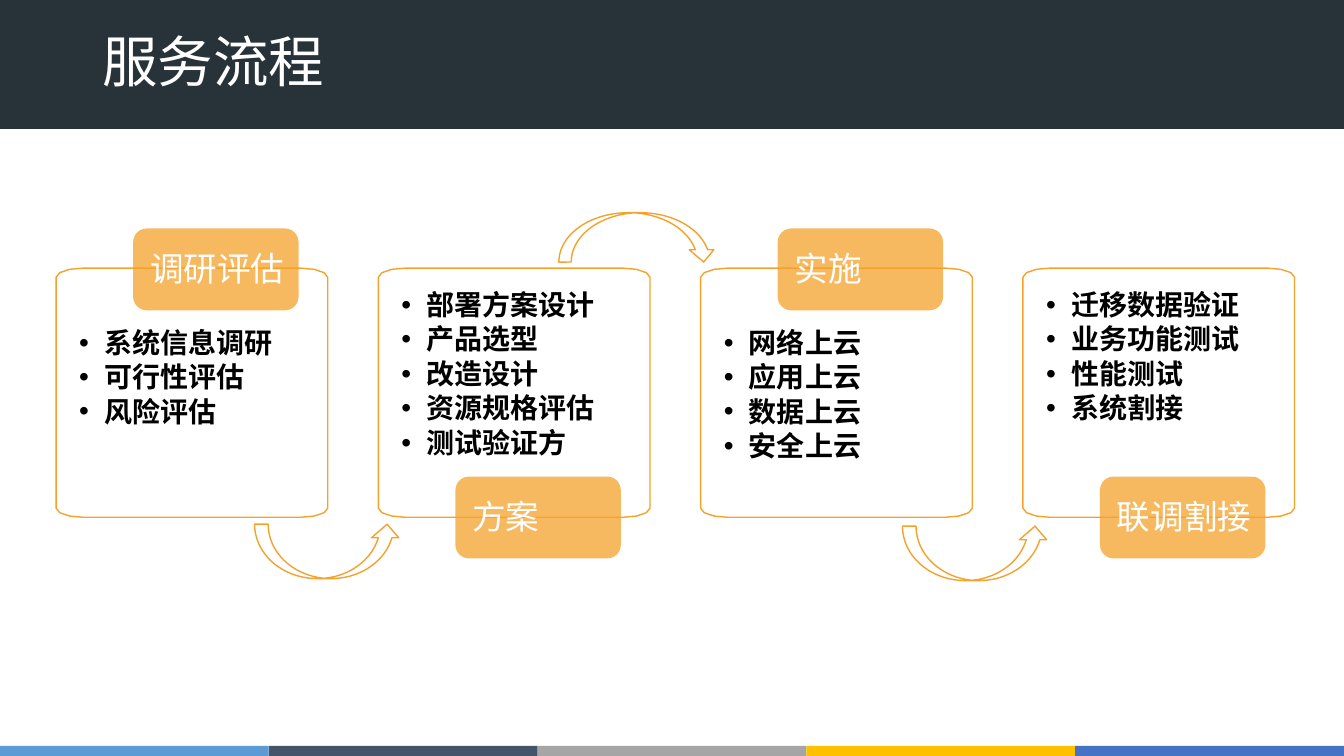
import math

from lxml import etree
from pptx import Presentation
from pptx.dml.color import RGBColor
from pptx.enum import shapes, text
from pptx.oxml import ns
from pptx.util import Pt

FONT = "Noto Sans CJK SC"
COLORS = {
    "band": "273339",
    "orange": "F5A22C",
    "white": "FFFFFF",
    "black": "000000",
}
FOOTER_COLORS = ["5B9BD5", "44546A", "A5A5A5", "FFC000", "4472C4"]

# Stage name, tasks, whether its label sits at the top of the panel
STAGES = [
    ("调研评估", ["系统信息调研", "可行性评估", "风险评估"], True),
    ("方案", ["部署方案设计", "产品选型", "改造设计", "资源规格评估", "测试验证方"], False),
    ("实施", ["网络上云", "应用上云", "数据上云", "安全上云"], True),
    ("联调割接", ["迁移数据验证", "业务功能测试", "性能测试", "系统割接"], False),
]
PANEL_LEFT, PANEL_TOP, PANEL_STEP = 40.1, 191.5, 230.2
PANEL_WIDTH, PANEL_HEIGHT = 194, 178
CORNER_X, CORNER_Y = 19.4, 6.5
CORNER_STEPS = 3

# Left, top, width, height, whether it curves below the panels
ARROWS = [
    (181.8, 374.4, 104.4, 38.9, True),
    (644.6, 375.8, 104.4, 38.9, True),
    (399.2, 151.9, 112.3, 35.3, False),
]


def rgb(hex_color):
    return RGBColor.from_string(hex_color)


def format_runs(paragraph, size, color, bold=False):
    for run in paragraph.runs:
        run.font.size = Pt(size)
        run.font.bold = bold
        run.font.color.rgb = rgb(color)
        run.font.name = FONT
        east_asian = etree.SubElement(run._r.get_or_add_rPr(), ns.qn("a:ea"))
        east_asian.set("typeface", FONT)


def add_block(slide, kind, box, fill, alpha=None):
    block = slide.shapes.add_shape(kind, *map(Pt, box))
    block.shadow.inherit = False
    block.line.fill.background()
    block.fill.solid()
    block.fill.fore_color.rgb = rgb(fill)
    if alpha is not None:
        color = block.element.spPr.find(".//" + ns.qn("a:srgbClr"))
        etree.SubElement(color, ns.qn("a:alpha")).set("val", str(alpha * 1000))
    return block


def set_outline(shape):
    shape.shadow.inherit = False
    shape.fill.background()
    shape.line.color.rgb = rgb(COLORS["orange"])
    shape.line.width = Pt(1)


def corner_points(left, top):
    """Clockwise outline with quarter-ellipse corners, starting at the left."""
    near_x, far_x = left + CORNER_X, left + PANEL_WIDTH - CORNER_X
    near_y, far_y = top + CORNER_Y, top + PANEL_HEIGHT - CORNER_Y
    centers = [(near_x, near_y), (far_x, near_y), (far_x, far_y), (near_x, far_y)]
    points = []
    for quarter, (x, y) in enumerate(centers):
        for step in range(CORNER_STEPS + 1):
            angle = math.pi + (quarter + step / CORNER_STEPS) * math.pi / 2
            points.append((Pt(x + CORNER_X * math.cos(angle)),
                           Pt(y + CORNER_Y * math.sin(angle))))
    return points


def add_bullet(paragraph):
    properties = paragraph._p.get_or_add_pPr()
    properties.set("marL", str(Pt(18)))
    properties.set("indent", str(-Pt(18)))
    etree.SubElement(properties, ns.qn("a:buFont")).set("typeface", "Arial")
    etree.SubElement(properties, ns.qn("a:buChar")).set("char", "•")


def add_panel(slide, left, tasks, label_on_top):
    start, *rest = corner_points(left, PANEL_TOP)
    builder = slide.shapes.build_freeform(*start)
    builder.add_line_segments(rest, close=True)
    panel = builder.convert_to_shape()
    set_outline(panel)
    frame = panel.text_frame
    frame.word_wrap = True
    frame.vertical_anchor = text.MSO_ANCHOR.TOP
    frame.margin_left = frame.margin_right = frame.margin_bottom = Pt(16.5)
    frame.margin_top = Pt(43.5 if label_on_top else 16.5)
    frame.text = "\n".join(tasks)
    for paragraph in frame.paragraphs:
        paragraph.alignment = text.PP_ALIGN.LEFT
        paragraph.line_spacing = 0.9
        paragraph.space_after = Pt(3)
        add_bullet(paragraph)
        format_runs(paragraph, 20, COLORS["black"], bold=True)


def add_label(slide, left, top, name):
    add_block(slide, shapes.MSO_SHAPE.ROUNDED_RECTANGLE, (left, top, 118.2, 58.5),
              COLORS["orange"], alpha=75)
    caption = slide.shapes.add_textbox(Pt(left + 5), Pt(top + 10), Pt(126), Pt(36))
    caption.text_frame.word_wrap = True
    caption.text_frame.text = name
    format_runs(caption.text_frame.paragraphs[0], 24, COLORS["white"])


def add_arrow(slide, left, top, width, height, below):
    arrow = slide.shapes.add_shape(shapes.MSO_SHAPE.CURVED_DOWN_ARROW,
                                   Pt(left), Pt(top), Pt(width), Pt(height))
    set_outline(arrow)
    if below:
        arrow.rotation = 180
        arrow.element.spPr.find(ns.qn("a:xfrm")).set("flipH", "1")


def add_title(slide, wording):
    title = slide.shapes.title
    title.left, title.top, title.width, title.height = map(Pt, (66, 19.5, 828, 53.5))
    title.text_frame.text = wording
    title.text_frame.vertical_anchor = text.MSO_ANCHOR.MIDDLE
    paragraph = title.text_frame.paragraphs[0]
    paragraph.alignment = text.PP_ALIGN.LEFT
    paragraph.line_spacing = 0.9
    format_runs(paragraph, 39.6, COLORS["white"])
    return title


def main():
    deck = Presentation()
    deck.slide_width, deck.slide_height = Pt(960), Pt(540)
    slide = deck.slides.add_slide(deck.slide_layouts[5])

    # Header band behind the title
    title = add_title(slide, "服务流程")
    band = add_block(slide, shapes.MSO_SHAPE.RECTANGLE, (0, -0.5, 960, 92.7), COLORS["band"])
    title.element.addprevious(band.element)

    # Footer stripe
    stripe = 960 / len(FOOTER_COLORS)
    for index, color in enumerate(FOOTER_COLORS):
        add_block(slide, shapes.MSO_SHAPE.RECTANGLE,
                  (index * stripe, 532.8, stripe, 7.2), color)

    # Stages
    for index, (name, tasks, label_on_top) in enumerate(STAGES):
        left = PANEL_LEFT + index * PANEL_STEP
        add_panel(slide, left, tasks, label_on_top)
        add_label(slide, left + 55, 163.2 if label_on_top else 340.4, name)

    # Arrows from stage to stage
    for arrow in ARROWS:
        add_arrow(slide, *arrow)

    deck.save("out.pptx")


if __name__ == "__main__":
    main()
